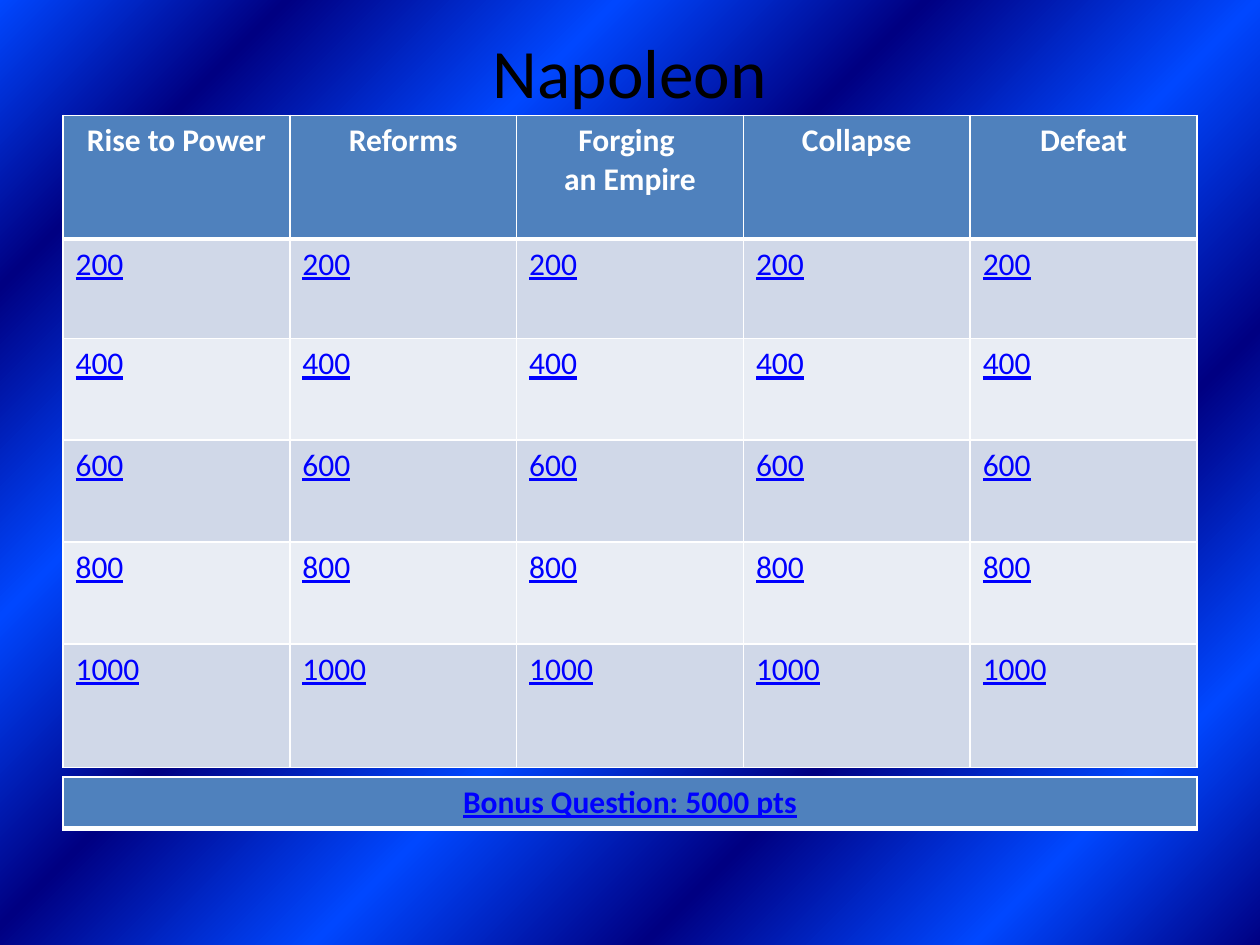
"""Build the Napoleon quiz board slide."""
from dataclasses import dataclass

from lxml.etree import SubElement
from pptx import Presentation
from pptx.dml.color import RGBColor
from pptx.enum.text import MSO_ANCHOR as Anchor, PP_ALIGN as Align
from pptx.oxml.ns import qn
from pptx.util import Pt

COLORS = {
    "title": "000000",
    "white": "FFFFFF",
    "header": "4F81BD",
    "link": "0000FF",
    "band_dark": "D0D8E8",
    "band_light": "E9EDF4",
    "navy": "000082",
    "bright": "0047FF",
}
FONT = "Calibri"
LEFT, WIDTH = 36, 648
TOPICS = ["Rise to Power", "Reforms", "Forging \nan Empire", "Collapse", "Defeat"]
POINTS = [200, 400, 600, 800, 1000]
GRADIENT_STOPS = [0, 13, 28, 43, 58, 72, 87, 100]


@dataclass
class CellStyle:
    fill: str
    color: str
    bold: bool = False
    underline: bool = False
    align: Align = Align.LEFT


@dataclass
class Row:
    texts: list[str]
    height: float
    style: CellStyle


def write_text(frame, text: str, *, size: float, color: str, bold: bool = False,
               underline: bool = False, align: Align = Align.LEFT) -> None:
    """Fill a text frame and format each of its paragraphs."""
    frame.text = text
    for paragraph in frame.paragraphs:
        paragraph.alignment = align
        for run in paragraph.runs:
            font = run.font
            font.name, font.size = FONT, Pt(size)
            font.bold, font.underline = bold, underline
            font.color.rgb = RGBColor.from_string(COLORS[color])


def add_border(cell, side: str, width: float) -> None:
    """Draw one white border line of a cell."""
    properties = cell._tc.get_or_add_tcPr()
    line = SubElement(properties, qn(f"a:ln{side}"), w=str(Pt(width)))
    fill = SubElement(line, qn("a:solidFill"))
    SubElement(fill, qn("a:srgbClr"), val=COLORS["white"])


def add_grid(slide, top: float, rows: list[Row]) -> None:
    """Add a table with equal columns and a thick line below its first row."""
    column_count = len(rows[0].texts)
    height = sum(row.height for row in rows)
    table = slide.shapes.add_table(len(rows), column_count, Pt(LEFT), Pt(top),
                                   Pt(WIDTH), Pt(height)).table
    table.first_row = table.horz_banding = False
    for column in table.columns:
        column.width = Pt(WIDTH / column_count)
    for row_index, row in enumerate(rows):
        table.rows[row_index].height = Pt(row.height)
        borders = {"L": 1, "R": 1, "T": 3 if row_index == 1 else 1,
                   "B": 3 if row_index == 0 else 1}
        style = row.style
        for column_index, text in enumerate(row.texts):
            cell = table.cell(row_index, column_index)
            for side, width in borders.items():
                add_border(cell, side, width)
            cell.fill.solid()
            cell.fill.fore_color.rgb = RGBColor.from_string(COLORS[style.fill])
            write_text(cell.text_frame, text, size=18, color=style.color,
                       bold=style.bold, underline=style.underline, align=style.align)


def set_background(slide) -> None:
    """Fill the background with alternating blues spreading from a corner."""
    background = slide.element.cSld.makeelement(qn("p:bg"))
    slide.element.cSld.insert(0, background)
    properties = SubElement(background, qn("p:bgPr"))
    gradient = SubElement(properties, qn("a:gradFill"), rotWithShape="1")
    stops = SubElement(gradient, qn("a:gsLst"))
    for index, position in enumerate(GRADIENT_STOPS):
        stop = SubElement(stops, qn("a:gs"), pos=str(position * 1000))
        color = COLORS["bright" if index % 2 else "navy"]
        SubElement(stop, qn("a:srgbClr"), val=color)
    shade = SubElement(gradient, qn("a:path"), {"path": "circle"})
    SubElement(shade, qn("a:fillToRect"), l="100000", t="100000")
    SubElement(properties, qn("a:effectLst"))


def main() -> None:
    """Create the presentation and save it."""
    presentation = Presentation()
    presentation.slide_width, presentation.slide_height = Pt(720), Pt(540)
    slide = presentation.slides.add_slide(presentation.slide_layouts[5])
    set_background(slide)

    title = slide.shapes.title
    title.left, title.top, title.width, title.height = Pt(LEFT), Pt(21.6), Pt(WIDTH), Pt(38)
    title.text_frame.vertical_anchor = Anchor.MIDDLE
    write_text(title.text_frame, "Napoleon", size=39.6, color="title", align=Align.CENTER)

    header = CellStyle("header", "white", bold=True, align=Align.CENTER)
    bonus = CellStyle("header", "link", bold=True, underline=True, align=Align.CENTER)
    bands = [CellStyle(fill, "link", underline=True) for fill in ("band_dark", "band_light")]
    heights = [56.8, 58.2, 58.2, 58.2, 70.6]
    board = [Row(TOPICS, 70.6, header)]
    for index, (points, height) in enumerate(zip(POINTS, heights)):
        board.append(Row([str(points)] * len(TOPICS), height, bands[index % 2]))
    add_grid(slide, 66, board)
    add_grid(slide, 444, [Row(["Bonus Question: 5000 pts"], 29.5, bonus)])
    presentation.save("out.pptx")


if __name__ == "__main__":
    main()
